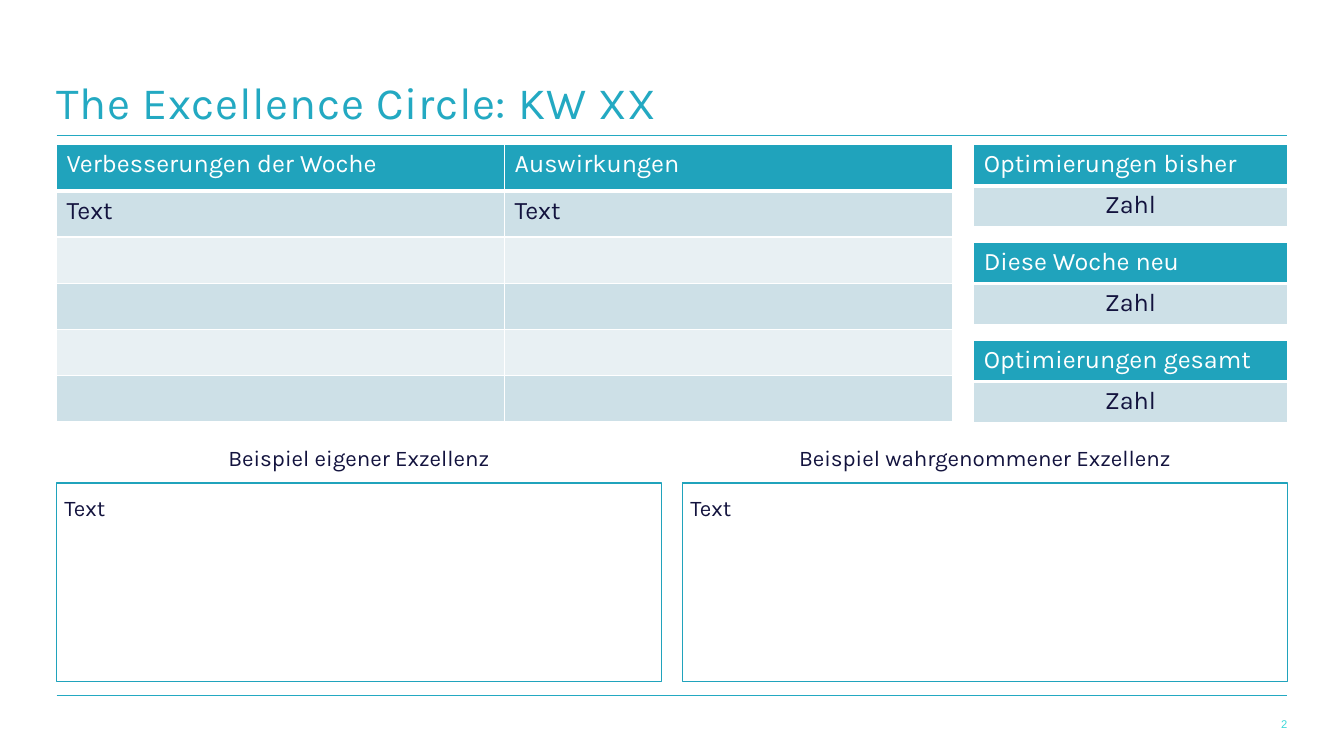
from dataclasses import dataclass

from lxml import etree
from pptx import Presentation
from pptx.dml.color import RGBColor
from pptx.enum.shapes import MSO_CONNECTOR, MSO_SHAPE
from pptx.enum.text import MSO_ANCHOR, PP_ALIGN
from pptx.oxml.ns import qn
from pptx.util import Pt

STRAIGHT = MSO_CONNECTOR.STRAIGHT
RECTANGLE = MSO_SHAPE.RECTANGLE
TOP, MIDDLE, BOTTOM = MSO_ANCHOR.TOP, MSO_ANCHOR.MIDDLE, MSO_ANCHOR.BOTTOM
LEFT, CENTER, RIGHT = PP_ALIGN.LEFT, PP_ALIGN.CENTER, PP_ALIGN.RIGHT


@dataclass(frozen=True)
class Theme:
    font: str = "Karla"
    number_font: str = "Arial"
    title_size: float = 32
    table_size: float = 18
    body_size: float = 16
    number_size: float = 8
    accent: str = "23A9C2"
    header: str = "20A3BC"
    number: str = "3DD8D9"
    ink: str = "13133E"
    white: str = "FFFFFF"
    bands: tuple = ("CDE0E7", "E8F0F3")
    line_width: float = 0.75


THEME = Theme()

PAGE_LEFT, PAGE_WIDTH = 40.4, 879.1
PAGE_RIGHT = PAGE_LEFT + PAGE_WIDTH
TABLE_TOP, TABLE_WIDTH, ROW_HEIGHT = 103.4, 640, 32.95
COUNTER_WIDTH, COUNTER_ROW, COUNTER_STEP = 224, 29.2, 69.9
EXAMPLE_WIDTH, CAPTION_TOP, CAPTION_HEIGHT = 432, 309, 36
EXAMPLE_HEIGHT = 141.6

IMPROVEMENTS = [("Verbesserungen der Woche", "Auswirkungen"), ("Text", "Text")] + [("", "")] * 4
COUNTERS = ["Optimierungen bisher", "Diese Woche neu", "Optimierungen gesamt"]
EXAMPLES = ["Beispiel eigener Exzellenz", "Beispiel wahrgenommener Exzellenz"]


def rgb(color):
    return RGBColor.from_string(color)


def write(frame, text, *, size=THEME.body_size, color=THEME.ink, font=THEME.font,
          align=LEFT, anchor=TOP, insets=None, spacing=0):
    """Fill a text frame; insets are left, top, right, bottom, spacing is in points."""
    frame.word_wrap = True
    frame.vertical_anchor = anchor
    if insets:
        (frame.margin_left, frame.margin_top,
         frame.margin_right, frame.margin_bottom) = map(Pt, insets)
    para = frame.paragraphs[0]
    para.alignment = align
    span = para.add_run()
    span.text = text
    span.font.name = font
    span.font.size = Pt(size)
    span.font.color.rgb = rgb(color)
    if spacing:
        span.font._element.set("spc", str(int(spacing * 100)))


def add_text(page, text, left, top, width, height, **text_format):
    box = page.shapes.add_textbox(Pt(left), Pt(top), Pt(width), Pt(height))
    write(box.text_frame, text, **text_format)


def add_rule(page, left, top, width, color):
    rule = page.shapes.add_connector(STRAIGHT, Pt(left), Pt(top), Pt(left + width), Pt(top))
    rule.line.color.rgb = rgb(color)
    rule.line.width = Pt(THEME.line_width)
    etree.SubElement(rule._element.spPr, qn("a:effectLst"))


def set_borders(cell, bottom_width):
    """Draw white borders, 1 pt wide except for the bottom one."""
    properties = cell._tc.get_or_add_tcPr()
    sides = [("lnL", 1), ("lnR", 1), ("lnT", 1), ("lnB", bottom_width)]
    for position, (side, width) in enumerate(sides):
        border = etree.Element(qn(f"a:{side}"), w=str(Pt(width)))
        fill = etree.SubElement(border, qn("a:solidFill"))
        etree.SubElement(fill, qn("a:srgbClr"), val=THEME.white)
        properties.insert(position, border)


def add_banded_table(page, rows, left, top, width, row_height, body_align=LEFT):
    columns = len(rows[0])
    table = page.shapes.add_table(len(rows), columns, Pt(left), Pt(top), Pt(width),
                                  Pt(row_height * len(rows))).table
    for column in table.columns:
        column.width = Pt(width / columns)
    for row_index, texts in enumerate(rows):
        table.rows[row_index].height = Pt(row_height)
        is_header = row_index == 0
        for column_index, text in enumerate(texts):
            cell = table.cell(row_index, column_index)
            cell.fill.solid()
            cell.fill.fore_color.rgb = rgb(
                THEME.header if is_header else THEME.bands[(row_index - 1) % 2])
            set_borders(cell, 3 if is_header else 1)
            if text:
                write(cell.text_frame, text, size=THEME.table_size,
                      color=THEME.white if is_header else THEME.ink,
                      align=LEFT if is_header else body_align)


def add_example(page, caption, left):
    """Add a caption above an outlined box for one example."""
    box_top = CAPTION_TOP + CAPTION_HEIGHT
    box = page.shapes.add_shape(RECTANGLE, Pt(left), Pt(box_top),
                                Pt(EXAMPLE_WIDTH), Pt(EXAMPLE_HEIGHT))
    box.shadow.inherit = False
    box.fill.background()
    box.line.color.rgb = rgb(THEME.header)
    box.line.width = Pt(THEME.line_width)
    write(box.text_frame, "Text", insets=(5.7, 8, 5.7, 5.7))
    add_text(page, caption, left, CAPTION_TOP, EXAMPLE_WIDTH, CAPTION_HEIGHT,
             align=CENTER, anchor=MIDDLE)
    add_rule(page, left, box_top, EXAMPLE_WIDTH, THEME.header)


def main():
    deck = Presentation()
    deck.slide_width, deck.slide_height = Pt(960), Pt(540)
    page = deck.slides.add_slide(deck.slide_layouts[6])

    add_text(page, "The Excellence Circle: KW XX", PAGE_LEFT, 52.6, PAGE_WIDTH, 38.9,
             size=THEME.title_size, color=THEME.accent, anchor=BOTTOM,
             insets=(0, 0, 0, 0), spacing=0.5)
    for top in (97, 496.6):
        add_rule(page, PAGE_LEFT, top, PAGE_WIDTH, THEME.accent)
    add_text(page, "2", PAGE_RIGHT - 207.4, 512.6, 207.4, 9.4, size=THEME.number_size,
             color=THEME.number, font=THEME.number_font, align=RIGHT, anchor=BOTTOM,
             insets=(0, 0, 0, 0))

    add_banded_table(page, IMPROVEMENTS, PAGE_LEFT, TABLE_TOP, TABLE_WIDTH, ROW_HEIGHT)
    for index, label in enumerate(COUNTERS):
        add_banded_table(page, [(label,), ("Zahl",)], PAGE_RIGHT - COUNTER_WIDTH,
                         TABLE_TOP + index * COUNTER_STEP, COUNTER_WIDTH, COUNTER_ROW,
                         body_align=CENTER)
    for caption, left in zip(EXAMPLES, (PAGE_LEFT, PAGE_RIGHT - EXAMPLE_WIDTH)):
        add_example(page, caption, left)

    deck.save("out.pptx")


if __name__ == "__main__":
    main()
